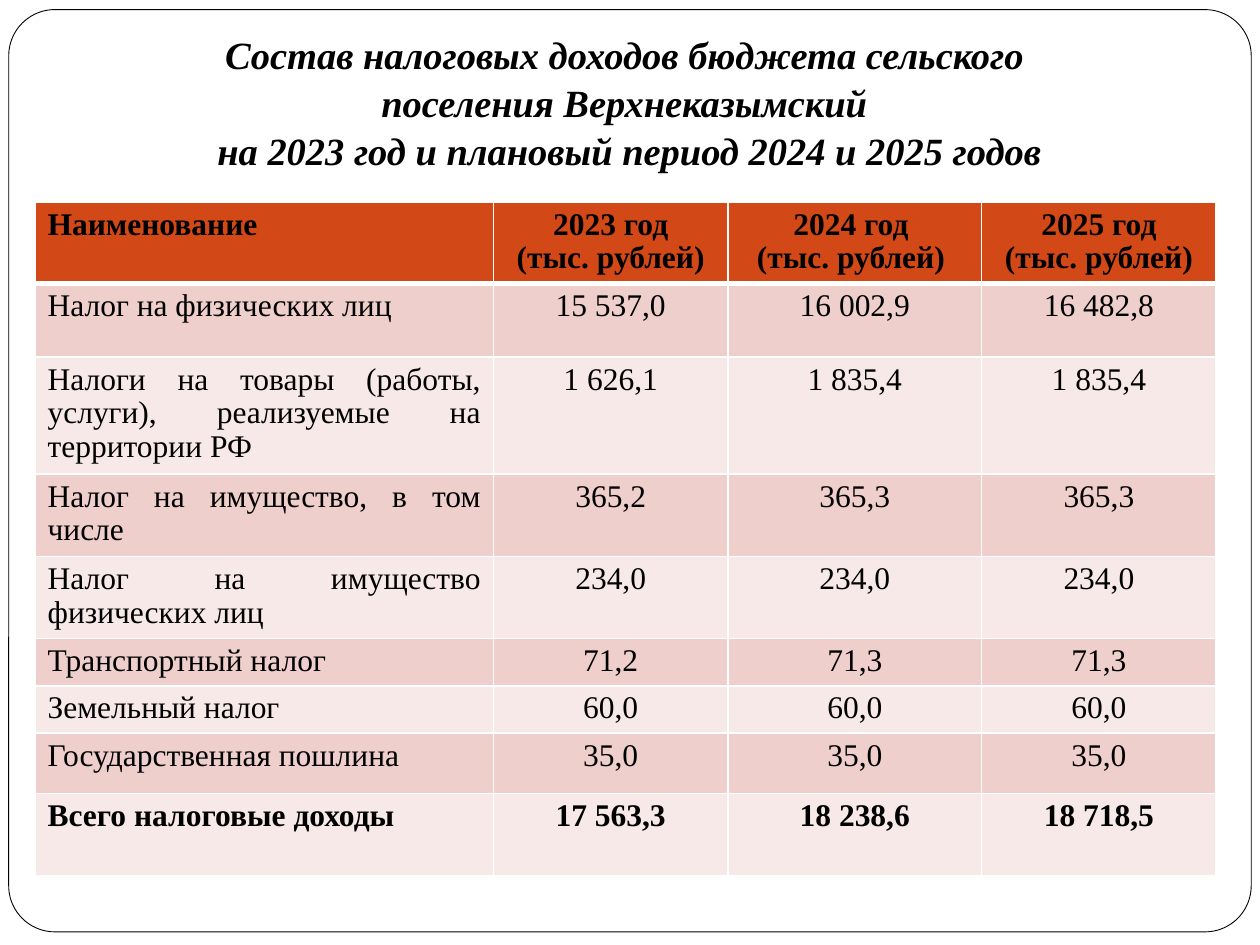
from dataclasses import dataclass

from lxml import etree
from pptx import Presentation
from pptx.dml.color import RGBColor
from pptx.enum.shapes import MSO_SHAPE
from pptx.enum.text import MSO_ANCHOR, MSO_AUTO_SIZE, PP_ALIGN
from pptx.oxml.ns import qn
from pptx.util import Pt

LEFT, CENTER, JUSTIFY = PP_ALIGN.LEFT, PP_ALIGN.CENTER, PP_ALIGN.JUSTIFY
BOTTOM = MSO_ANCHOR.BOTTOM
NO_AUTOFIT = MSO_AUTO_SIZE.NONE
ROUNDED = MSO_SHAPE.ROUNDED_RECTANGLE

FONT = "Times New Roman"
BLACK, WHITE = "000000", "FFFFFF"
HEADER_FILL = "D34817"
BAND_FILLS = ("EFCFCC", "F7E9E8")
COLUMN_WIDTHS = (262, 134, 145, 134)


@dataclass(frozen=True)
class BudgetRow:
    name: str
    amounts: tuple[str, str, str]
    height: float
    bold: bool = False


HEADER = BudgetRow(
    "Наименование",
    ("2023 год\n (тыс. рублей) ", "2024 год \n(тыс. рублей) ", "2025 год\n (тыс. рублей) "),
    46.5,
    True,
)
TAXES = (
    BudgetRow("Налог на физических лиц ", ("15 537,0", "16 002,9", "16 482,8"), 42),
    BudgetRow("Налоги на товары (работы, услуги), реализуемые на территории РФ",
              ("1 626,1", "1 835,4", "1 835,4"), 67),
    BudgetRow("Налог на имущество, в том числе ", ("365,2", "365,3", "365,3"), 47),
    BudgetRow("Налог на имущество физических лиц", ("234,0", "234,0", "234,0"), 47),
    BudgetRow("Транспортный налог", ("71,2", "71,3", "71,3"), 27),
    BudgetRow("Земельный налог ", ("60,0", "60,0", "60,0"), 27),
    BudgetRow("Государственная пошлина ", ("35,0", "35,0", "35,0"), 34.5),
    BudgetRow("Всего налоговые доходы ", ("17 563,3", "18 238,6", "18 718,5"), 47, True),
)


def rgb(value: str) -> RGBColor:
    return RGBColor.from_string(value)


def write(text_frame, text: str, *, size: float, align, bold: bool = False,
          italic: bool = False, spacing: float = 1.0) -> None:
    text_frame.text = text
    for paragraph in text_frame.paragraphs:
        paragraph.alignment = align
        paragraph.line_spacing = spacing
        for run in paragraph.runs:
            font = run.font
            font.name, font.size = FONT, Pt(size)
            font.bold, font.italic = bold, italic
            font.color.rgb = rgb(BLACK)


def set_borders(cell, bottom: float) -> None:
    properties = cell._tc.get_or_add_tcPr()
    for side, width in (("L", 1), ("R", 1), ("T", 1), ("B", bottom)):
        line = etree.SubElement(properties, qn(f"a:ln{side}"), w=str(Pt(width)))
        fill = etree.SubElement(line, qn("a:solidFill"))
        etree.SubElement(fill, qn("a:srgbClr"), val=WHITE)


def fill_row(cells, row: BudgetRow, fill: str, name_align, bottom: float = 1) -> None:
    for column, (cell, text) in enumerate(zip(cells, (row.name, *row.amounts))):
        write(cell.text_frame, text, size=18, bold=row.bold, spacing=0.96,
              align=CENTER if column else name_align)
        set_borders(cell, bottom)
        cell.fill.solid()
        cell.fill.fore_color.rgb = rgb(fill)


def add_frame(slide) -> None:
    frame = slide.shapes.add_shape(ROUNDED, Pt(5), Pt(5.5), Pt(710), Pt(527))
    frame.adjustments[0] = 0.05
    frame.shadow.inherit = False
    frame.fill.solid()
    frame.fill.fore_color.rgb = rgb(WHITE)
    frame.line.color.rgb = rgb(BLACK)
    frame.line.width = Pt(0.5)
    slide.shapes._spTree.insert(2, frame._element)


def add_title(slide) -> None:
    title = slide.shapes.title
    title.left, title.top, title.width, title.height = Pt(36), Pt(15), Pt(647), Pt(91)
    text_frame = title.text_frame
    text_frame.auto_size = NO_AUTOFIT
    text_frame.vertical_anchor = BOTTOM
    text_frame.margin_bottom = Pt(7.2)
    write(text_frame,
          "Состав налоговых доходов бюджета сельского \v"
          "поселения Верхнеказымский \v"
          "на 2023 год и плановый период 2024 и 2025 годов",
          size=22, align=CENTER, bold=True, italic=True, spacing=1.04)


def add_budget_table(slide) -> None:
    rows = (HEADER, *TAXES)
    table = slide.shapes.add_table(
        len(rows), len(COLUMN_WIDTHS), Pt(20), Pt(115.5),
        Pt(sum(COLUMN_WIDTHS)), Pt(sum(row.height for row in rows))).table
    for column, width in zip(table.columns, COLUMN_WIDTHS):
        column.width = Pt(width)
    for table_row, row in zip(table.rows, rows):
        table_row.height = Pt(row.height)
    fill_row(table.rows[0].cells, HEADER, HEADER_FILL, LEFT, bottom=3)
    for index, tax in enumerate(TAXES):
        fill_row(table.rows[index + 1].cells, tax, BAND_FILLS[index % 2], JUSTIFY)


def main() -> None:
    presentation = Presentation()
    presentation.slide_width, presentation.slide_height = Pt(720), Pt(540)
    slide = presentation.slides.add_slide(presentation.slide_layouts[5])
    add_frame(slide)
    add_title(slide)
    add_budget_table(slide)
    presentation.save("out.pptx")


if __name__ == "__main__":
    main()
